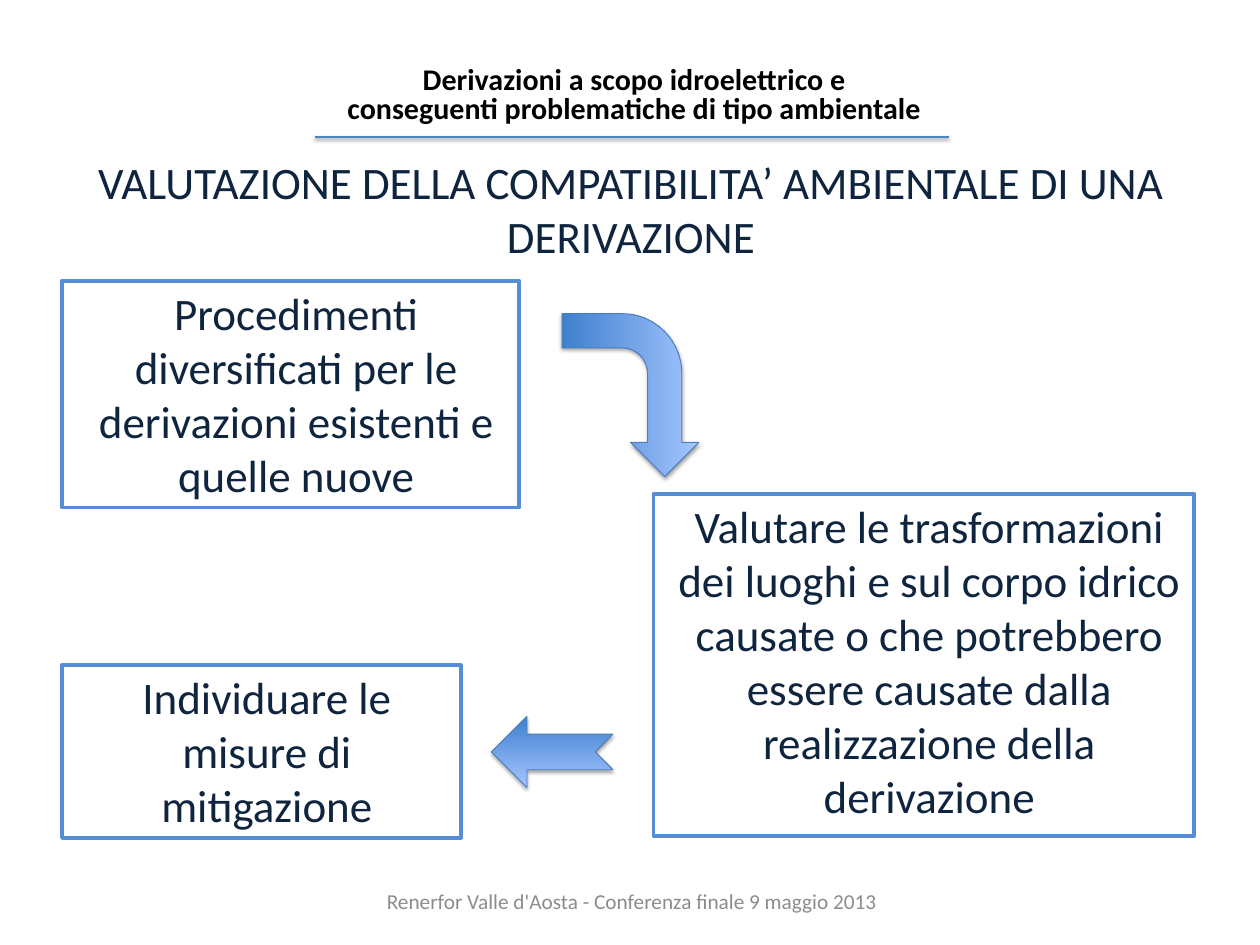
from lxml.etree import SubElement
from pptx import Presentation
from pptx.dml.color import RGBColor
from pptx.enum.shapes import MSO_CONNECTOR, MSO_SHAPE as SHAPE
from pptx.enum.text import MSO_ANCHOR as ANCHOR, MSO_AUTO_SIZE, PP_ALIGN
from pptx.oxml.ns import qn
from pptx.util import Inches, Pt

BLACK = RGBColor(0x00, 0x00, 0x00)
NAVY = RGBColor(0x0F, 0x24, 0x3E)
GREY = RGBColor(0x8C, 0x8C, 0x8C)
RULE_BLUE = RGBColor(0x4F, 0x81, 0xBD)
BOX_BLUE = RGBColor(0x55, 0x8E, 0xD5)
ARROW_EDGE = RGBColor(0x4B, 0x7E, 0xBC)
ARROW_DARK = RGBColor(0x3F, 0x80, 0xCE)
ARROW_LIGHT = RGBColor(0xA4, 0xC4, 0xFF)

COLS, ROWS = 28, 21
FONT = "Calibri"
BODY_SIZE = 36


class SlideBuilder:
    """Places elements on a grid of COLS by ROWS cells."""

    def __init__(self, prs):
        self.slide = prs.slides.add_slide(prs.slide_layouts[6])
        self.shapes = self.slide.shapes
        self.col = prs.slide_width / COLS
        self.row = prs.slide_height / ROWS

    def place(self, x, y, w, h):
        return (round(x * self.col), round(y * self.row),
                round(w * self.col), round(h * self.row))

    def shadow(self, sp, opacity, distance):
        """Give the element a soft shadow that falls straight down."""
        effects = SubElement(sp._element.spPr, qn("a:effectLst"))
        outer = SubElement(effects, qn("a:outerShdw"), blurRad=str(Pt(3.1)),
                           dist=str(Pt(distance)), dir="5400000", rotWithShape="0")
        colour = SubElement(outer, qn("a:srgbClr"), val=str(BLACK))
        SubElement(colour, qn("a:alpha"), val=str(opacity * 1000))

    def add_lines(self, tf, lines, size, colour, bold=False):
        tf.word_wrap = True
        p = tf.paragraphs[0]
        p.alignment = PP_ALIGN.CENTER
        for i, line in enumerate(lines):
            if i:
                p.add_line_break()
            r = p.add_run()
            r.text = line
            r.font.name, r.font.size, r.font.bold = FONT, Pt(size), bold
            r.font.color.rgb = colour
        return p

    def text(self, area, lines, size, colour, bold=False, anchor=ANCHOR.MIDDLE):
        tf = self.shapes.add_textbox(*self.place(*area)).text_frame
        tf.vertical_anchor = anchor
        if anchor == ANCHOR.TOP:
            tf.margin_top = 0
        return self.add_lines(tf, lines, size, colour, bold)

    def box(self, area, text, kind=SHAPE.RECTANGLE):
        sp = self.shapes.add_shape(kind, *self.place(*area))
        sp.shadow.inherit = False
        sp.fill.background()
        sp.line.color.rgb, sp.line.width = BOX_BLUE, Pt(3)
        tf = sp.text_frame
        tf.vertical_anchor = ANCHOR.TOP
        p = self.add_lines(tf, [text], BODY_SIZE, NAVY)
        p._p.get_or_add_pPr().set("marL", str(Inches(0.12)))
        tf.auto_size = MSO_AUTO_SIZE.SHAPE_TO_FIT_TEXT

    def arrow(self, area, kind, rotation):
        sp = self.shapes.add_shape(kind, *self.place(*area))
        sp.rotation = rotation
        sp.fill.gradient()
        sp.fill.gradient_angle = 90
        for stop, position, colour in zip(sp.fill.gradient_stops, (0, 1),
                                          (ARROW_DARK, ARROW_LIGHT)):
            stop.position, stop.color.rgb = position, colour
        sp.line.color.rgb, sp.line.width = ARROW_EDGE, Pt(0.75)
        self.shadow(sp, 35, 1.8)

    def rule(self, x, y, w):
        left, top, width, _ = self.place(x, y, w, 0)
        line = self.shapes.add_connector(MSO_CONNECTOR.STRAIGHT,
                                         left, top, left + width, top)
        line.line.color.rgb, line.line.width = RULE_BLUE, Pt(2)
        self.shadow(line, 38, 1.6)


def main():
    prs = Presentation()
    prs.slide_width, prs.slide_height = Inches(14), Inches(10.5)
    s = SlideBuilder(prs)

    s.rule(7, 3.04, 14.08)
    heading = s.text((0.9, 1.5, 26.38, 1.94),
                     ["Derivazioni a scopo idroelettrico e",
                      "conseguenti problematiche di tipo ambientale"],
                     24, BLACK, bold=True, anchor=ANCHOR.TOP)
    heading.line_spacing = 0.8
    s.text((1.5, 3.62, 25.04, 2.04),
           ["VALUTAZIONE DELLA COMPATIBILITA’ AMBIENTALE DI UNA DERIVAZIONE"],
           BODY_SIZE, NAVY)

    s.box((1.38, 6.24, 10.16, 5.04),
          "Procedimenti diversificati per le derivazioni esistenti e quelle nuove")
    s.box((14.52, 10.98, 12.02, 7.6),
          "Valutare le trasformazioni dei luoghi e sul corpo idrico causate o che "
          "potrebbero essere causate dalla realizzazione della derivazione")
    s.box((1.38, 14.78, 8.86, 3.84), "Individuare le misure di mitigazione",
          SHAPE.FLOWCHART_PROCESS)

    s.arrow((12.2, 7.26, 3.62, 3.04), SHAPE.BENT_ARROW, 90)
    s.arrow((10.92, 15.92, 2.7, 1.58), SHAPE.NOTCHED_RIGHT_ARROW, 180)

    s.text((8.14, 19.46, 11.8, 1.12),
           ["Renerfor Valle d'Aosta - Conferenza finale 9 maggio 2013"], 17, GREY)
    prs.save("out.pptx")


if __name__ == "__main__":
    main()
